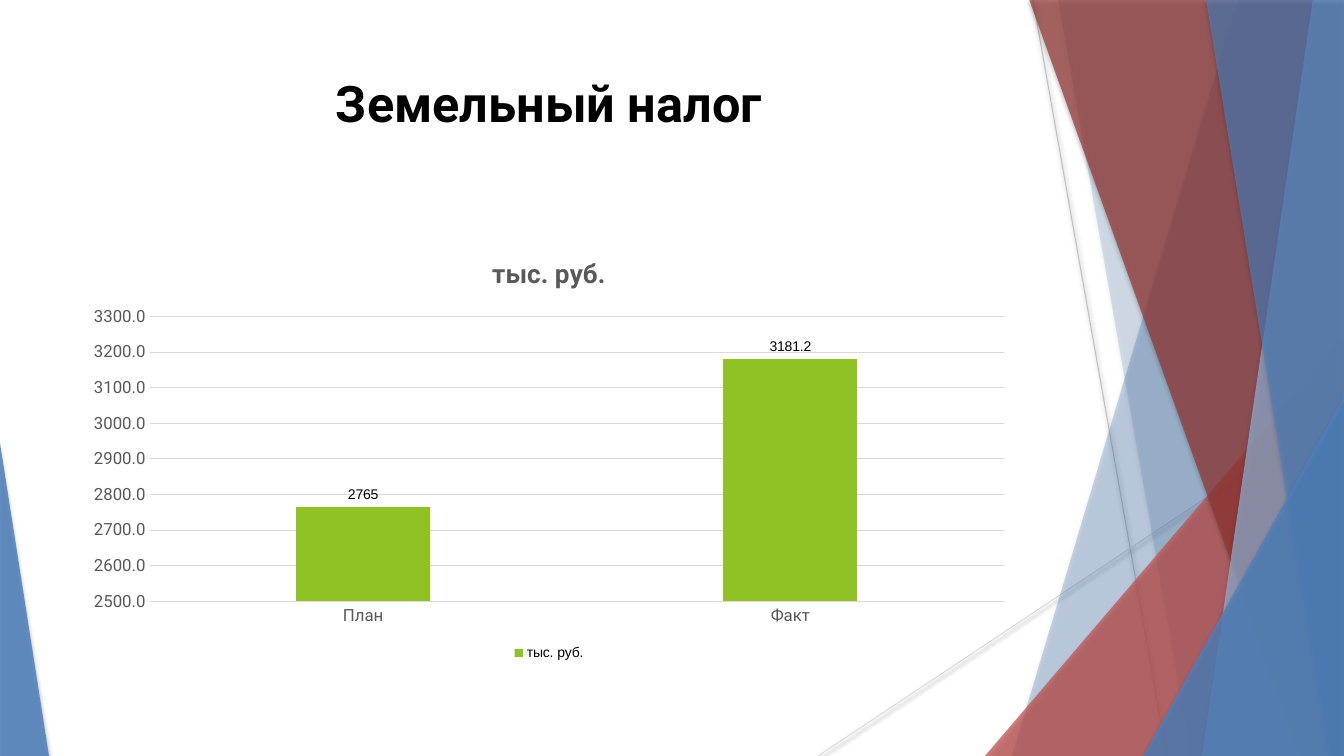
import pptx
import pptx.chart.data
import pptx.dml.color
import pptx.enum.chart
import pptx.enum.shapes
import pptx.enum.text
import pptx.oxml
import pptx.oxml.ns
import pptx.util

# Content
TITLE = "Земельный налог"
UNIT = "тыс. руб."
RESULTS = {"План": 2765, "Факт": 3181.2}
AXIS_RANGE = (2500, 3300, 100)

# Layout in px
WIDTH, HEIGHT = 1344, 756
TITLE_BOX = (75, 67, 948, 145)
CHART_BOX = (75, 238, 948, 427)

# Decoration, back to front
RAYS = [("BFBFBF", (1033, 0, 1167, 756)), ("D9D9D9", (1344, 406, 818, 756))]
# band: left edge x at top and bottom; triangle: box and apex position
FACETS = [
    ("band", "4F81BD", 30, (1238, 1012)),
    ("band", "4F81BD", 20, (1058, 1191)),
    ("triangle", "C0504D", 72, (985, 336, 359, 420, 1)),
    ("band", "953735", 70, (1029, 1301)),
    ("band", "95B3D7", 70, (1313, 1202)),
    ("band", "4F81BD", 65, (1206, 1329)),
    ("triangle", "4F81BD", 80, (1143, 396, 201, 360, 1)),
    ("triangle", "4F81BD", 85, (0, 443, 49, 313, 0)),
]
SCALE = 914400 / 100.8


def px(*lengths):
    return [round(length * SCALE) for length in lengths]


def color(value):
    return pptx.dml.color.RGBColor.from_string(value)


def style_font(font, size, name, value, bold=False):
    font.size = pptx.util.Pt(size)
    font.name = name
    font.color.rgb = color(value)
    font.bold = bold


def style_line(line, value):
    line.color.rgb = color(value)
    line.width = pptx.util.Pt(0.75)


def add_shadow(shape, alpha, blur, distance):
    blur, distance = pptx.util.Pt(blur), pptx.util.Pt(distance)
    shape.element.spPr.append(pptx.oxml.parse_xml(
        f'<a:effectLst {pptx.oxml.ns.nsdecls("a")}>'
        f'<a:outerShdw blurRad="{blur}" dist="{distance}" dir="5400000" rotWithShape="0">'
        f'<a:srgbClr val="000000"><a:alpha val="{alpha * 1000}"/></a:srgbClr>'
        '</a:outerShdw></a:effectLst>'))


def add_facet(shapes, kind, value, opacity, geometry):
    if kind == "band":
        top, bottom = geometry
        builder = shapes.build_freeform(top, -1, scale=SCALE)
        builder.add_line_segments([(WIDTH, -1), (WIDTH, HEIGHT), (bottom, HEIGHT)])
        facet = builder.convert_to_shape()
    else:
        *box, apex = geometry
        facet = shapes.add_shape(
            pptx.enum.shapes.MSO_SHAPE.ISOSCELES_TRIANGLE, *px(*box))
        facet.adjustments[0] = apex
    facet.fill.solid()
    facet.fill.fore_color.rgb = color(value)
    tint = facet.element.spPr.find(".//" + pptx.oxml.ns.qn("a:srgbClr"))
    tint.append(pptx.oxml.parse_xml(
        f'<a:alpha {pptx.oxml.ns.nsdecls("a")} val="{opacity * 1000}"/>'))
    facet.line.fill.background()
    add_shadow(facet, 35, 3, 2)


def add_title(title):
    title.left, title.top, title.width, title.height = px(*TITLE_BOX)
    frame = title.text_frame
    frame.text = TITLE
    frame.word_wrap = True
    frame.auto_size = pptx.enum.text.MSO_AUTO_SIZE.NONE
    frame.vertical_anchor = pptx.enum.text.MSO_ANCHOR.TOP
    para = frame.paragraphs[0]
    para.alignment = pptx.enum.text.PP_ALIGN.CENTER
    style_font(para.font, 36, "Roboto", "000000", True)


def add_tax_chart(shapes):
    data = pptx.chart.data.CategoryChartData()
    data.categories = list(RESULTS)
    data.add_series(UNIT, list(RESULTS.values()))
    chart = shapes.add_chart(
        pptx.enum.chart.XL_CHART_TYPE.COLUMN_CLUSTERED, *px(*CHART_BOX), data).chart
    style_font(chart.font, 10, "Arial", "000000")

    # Title and legend
    chart.has_title = True
    chart.chart_title.include_in_layout = False
    chart.chart_title.text_frame.text = UNIT
    heading = chart.chart_title.text_frame.paragraphs[0]
    style_font(heading.font, 18.6, "Roboto", "595959", True)
    chart.has_legend = True
    chart.legend.position = pptx.enum.chart.XL_LEGEND_POSITION.BOTTOM
    chart.legend.include_in_layout = False

    # Axes
    for axis in (chart.category_axis, chart.value_axis):
        axis.major_tick_mark = pptx.enum.chart.XL_TICK_MARK.NONE
        axis.minor_tick_mark = pptx.enum.chart.XL_TICK_MARK.NONE
        style_font(axis.tick_labels.font, 12, "Roboto", "595959")
    style_line(chart.category_axis.format.line, "D9D9D9")
    values = chart.value_axis
    values.minimum_scale, values.maximum_scale, values.major_unit = AXIS_RANGE
    values.tick_labels.number_format = "0.0"
    values.tick_labels.number_format_is_linked = False
    values.format.line.fill.background()
    style_line(values.major_gridlines.format.line, "D9D9D9")

    # Columns
    plot = chart.plots[0]
    plot.gap_width, plot.overlap = 219, -27
    plot.vary_by_categories = False
    columns = plot.series[0]
    columns.format.fill.solid()
    columns.format.fill.fore_color.rgb = color("90C226")
    columns.data_labels.show_value = True
    columns.data_labels.position = pptx.enum.chart.XL_LABEL_POSITION.OUTSIDE_END


def main():
    deck = pptx.Presentation()
    deck.slide_width, deck.slide_height = px(WIDTH, HEIGHT)
    page = deck.slides.add_slide(deck.slide_layouts[5])

    # Background rays and facets
    for value, ends in RAYS:
        ray = page.shapes.add_connector(
            pptx.enum.shapes.MSO_CONNECTOR.STRAIGHT, *px(*ends))
        style_line(ray.line, value)
        add_shadow(ray, 38, 3.1, 1.6)
    for facet in FACETS:
        add_facet(page.shapes, *facet)

    add_title(page.shapes.title)
    add_tax_chart(page.shapes)
    deck.save("out.pptx")


if __name__ == "__main__":
    main()
